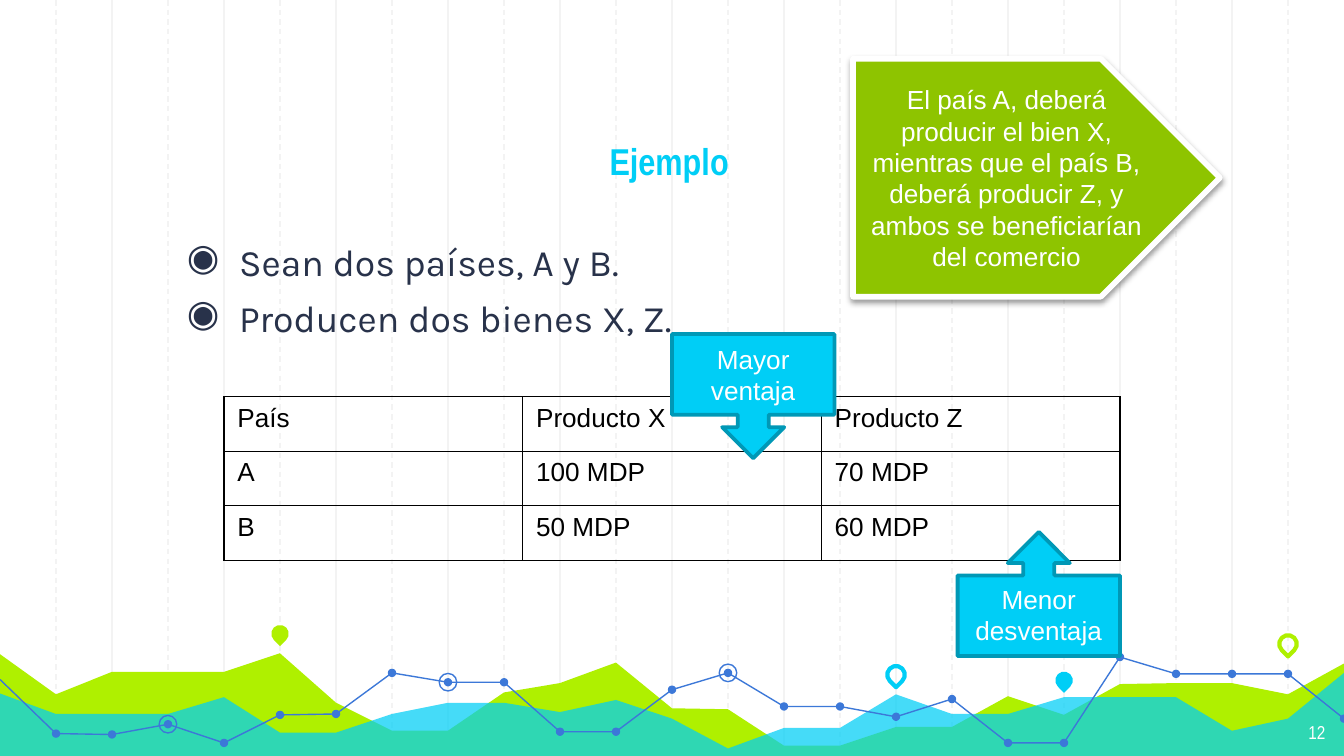
from lxml.etree import SubElement
from pptx import Presentation
from pptx.dml.color import RGBColor
from pptx.enum.dml import MSO_LINE
from pptx.enum.shapes import MSO_CONNECTOR, MSO_SHAPE as Preset
from pptx.enum.text import MSO_ANCHOR as Anchor, PP_ALIGN as Align
from pptx.oxml.ns import qn
from pptx.util import Pt

COLORS = {
    "white": "FFFFFF", "black": "000000", "grid": "F3F3F3",
    "lime": "AFF000", "cyan": "00CEF6", "teal": "0098B6",
    "trend": "3C78D8", "navy": "28324A", "green": "8EC400",
}
WIDTH, HEIGHT = 720, 405
STEP = 30  # one chart column
BASE = 406  # bottom of the areas

# One height for each column, from the left edge to the right edge
LIME_AREA = [350.5, 372, 360, 360, 360, 350, 376.5, 391.5, 391.5, 371, 366, 355, 379.5,
             380, 399.5, 399.5, 389.5, 389.5, 373, 383, 366.5, 366, 366, 372, 355.5]
CYAN_AREA = [371.5, 382.5, 382.5, 382.5, 373.5, 392.5, 392.5, 382.5, 376.5, 376.5, 381.5, 375, 385,
             401, 390, 390, 372, 382.5, 382.5, 373.5, 373.5, 373.5, 391.5, 385, 360.5]
TREND = [364, 393, 393.5, 388, 398, 383, 382.5, 360.5, 365.5, 365.5, 392, 392, 369.5,
         360.5, 378.5, 378.5, 384, 374.5, 398, 398, 352, 361, 361, 361, 385]
RINGED_COLUMNS = (3, 8, 13)
# column, centre height, colour, filled
PINS = [(5, 339.5, "lime", True), (16, 361.5, "cyan", False),
        (19, 364.5, "cyan", True), (23, 345, "lime", False)]

OUTPUTS = [("País", "Producto X", "Producto Z"),
           ("A", "100 MDP", "70 MDP"),
           ("B", "50 MDP", "60 MDP")]


def rgb(name):
    return RGBColor.from_string(COLORS[name])


def paint(shape, fill=None, line=None, weight=0.75):
    shape.shadow.inherit = False
    if fill:
        shape.fill.solid()
        shape.fill.fore_color.rgb = rgb(fill)
    else:
        shape.fill.background()
    if line:
        shape.line.color.rgb = rgb(line)
        shape.line.width = Pt(weight)
    else:
        shape.line.fill.background()


def write(frame, lines, size, color, font="Arial", align=Align.CENTER, bold=False):
    frame.word_wrap = True
    frame.text = "\n".join(lines)
    for paragraph in frame.paragraphs:
        paragraph.alignment = align
        for run in paragraph.runs:
            run.font.size = Pt(size)
            run.font.name = font
            run.font.bold = bold
            run.font.color.rgb = rgb(color)


def add_text(slide, box, lines, size, color, inset=7.2, anchor=Anchor.TOP, **style):
    frame = slide.shapes.add_textbox(*map(Pt, box)).text_frame
    frame.margin_top = frame.margin_bottom = Pt(inset)
    frame.vertical_anchor = anchor
    write(frame, lines, size, color, **style)
    return frame


def add_preset(slide, preset, box, **look):
    shape = slide.shapes.add_shape(preset, *map(Pt, box))
    paint(shape, **look)
    return shape


def add_centred(slide, preset, x, y, size, **look):
    """Add a round mark by its centre and diameter."""
    return add_preset(slide, preset, (x - size / 2, y - size / 2, size, size), **look)


def add_outline(slide, points, close, **look):
    start, *rest = [(Pt(x), Pt(y)) for x, y in points]
    builder = slide.shapes.build_freeform(*start)
    builder.add_line_segments(rest, close=close)
    outline = builder.convert_to_shape()
    paint(outline, **look)
    return outline


def column_points(heights):
    return [(column * STEP, y) for column, y in enumerate(heights)]


def add_area(slide, heights, color):
    points = column_points(heights) + [(WIDTH, BASE), (0, BASE)]
    return add_outline(slide, points, True, fill=color)


def set_alpha(shape, percent):
    color = shape.fill._xPr.find(".//" + qn("a:srgbClr"))
    SubElement(color, qn("a:alpha"), val=str(percent * 1000))


def add_drop_shadow(shape):
    effects = shape._element.spPr.find(qn("a:effectLst"))
    shadow = SubElement(effects, qn("a:outerShdw"), blurRad=str(Pt(3.1)), dist=str(Pt(1.6)),
                        dir="5400000", algn="ctr", rotWithShape="0")
    color = SubElement(shadow, qn("a:srgbClr"), val=COLORS["black"])
    SubElement(color, qn("a:alpha"), val="38000")


def add_grid(slide):
    """Solid rules on even columns, dashed ones on odd columns."""
    for column in range(1, WIDTH // STEP):
        x = Pt(column * STEP)
        rule = slide.shapes.add_connector(MSO_CONNECTOR.STRAIGHT, x, 0, x, Pt(BASE))
        rule.line.color.rgb = rgb("grid")
        rule.line.width = Pt(0.75)
        if column % 2:
            rule.line.dash_style = MSO_LINE.DASH
        SubElement(rule._element.spPr, qn("a:effectLst"))


def add_landscape(slide):
    add_area(slide, LIME_AREA, "lime")
    set_alpha(add_area(slide, CYAN_AREA, "cyan"), 73)
    for column, y, color, filled in PINS:
        look = {"fill": color} if filled else {"line": color, "weight": 2.25}
        pin = add_centred(slide, Preset.TEAR, column * STEP, y, 9.4, **look)
        pin.rotation = 135
    trend_points = column_points(TREND)
    add_outline(slide, trend_points, False, line="trend")
    for x, y in trend_points[1:]:
        add_centred(slide, Preset.OVAL, x, y, 4.5, fill="trend")
    for column in RINGED_COLUMNS:
        add_centred(slide, Preset.OVAL, *trend_points[column], 9.4, line="trend")


def add_bullets(frame):
    for paragraph in frame.paragraphs:
        paragraph.space_before = Pt(6)
        props = paragraph._p.get_or_add_pPr()
        props.set("marL", str(Pt(36)))
        props.set("indent", str(Pt(-28)))
        bullet_color = SubElement(props, qn("a:buClr"))
        SubElement(bullet_color, qn("a:srgbClr"), val=COLORS["navy"])
        SubElement(props, qn("a:buChar"), char="◉")


def add_cell_borders(cell):
    props = cell._tc.get_or_add_tcPr()
    for index, side in enumerate(("lnL", "lnR", "lnT", "lnB")):
        border = props.makeelement(qn("a:" + side), {"w": str(Pt(0.75))})
        fill = SubElement(border, qn("a:solidFill"))
        SubElement(fill, qn("a:srgbClr"), val=COLORS["black"])
        props.insert(index, border)


def add_output_table(slide):
    box = map(Pt, (120, 212.5, 480, 87.75))
    table = slide.shapes.add_table(len(OUTPUTS), len(OUTPUTS[0]), *box).table
    table.first_row = table.horz_banding = False
    for r, row in enumerate(OUTPUTS):
        for c, value in enumerate(row):
            cell = table.cell(r, c)
            cell.fill.background()
            write(cell.text_frame, [value], 14, "black", align=Align.LEFT)
            add_cell_borders(cell)


def add_callouts(slide):
    look = {"fill": "cyan", "line": "teal", "weight": 2}
    advantage = add_preset(slide, Preset.DOWN_ARROW_CALLOUT, (360, 179, 87, 66.5), **look)
    write(advantage.text_frame, ["Mayor ventaja"], 14, "white")
    disadvantage = add_preset(slide, Preset.DOWN_ARROW_CALLOUT, (513, 285, 87, 66.5), **look)
    disadvantage.rotation = 180
    add_text(slide, (490, 309, 133, 41), ["Menor", "desventaja"], 14, "white", inset=3.6)

    conclusion = add_preset(slide, Preset.PENTAGON, (457, 31.5, 196.5, 127.5),
                            fill="green", line="white", weight=3)
    add_drop_shadow(conclusion)
    write(conclusion.text_frame,
          ["El país A, deberá producir el bien X, mientras que el país B, "
           "deberá producir Z, y ambos se beneficiarían del comercio"], 14, "white")


def main():
    deck = Presentation()
    deck.slide_width, deck.slide_height = Pt(WIDTH), Pt(HEIGHT)
    slide = deck.slides.add_slide(deck.slide_layouts[6])
    add_grid(slide)
    add_landscape(slide)
    add_text(slide, (83, 49.5, 551, 56), ["Ejemplo"], 20, "cyan",
             anchor=Anchor.BOTTOM, font="Arial Narrow", bold=True)
    premises = add_text(slide, (85, 121, 551, 151),
                        ["Sean dos países, A y B.", "Producen dos bienes X, Z."],
                        20, "navy", font="Karla", align=Align.LEFT)
    add_bullets(premises)
    add_text(slide, (674, 380, 43, 25), ["12"], 10, "white",
             font="Arial Narrow", align=Align.RIGHT)
    add_output_table(slide)
    add_callouts(slide)
    deck.save("out.pptx")


if __name__ == "__main__":
    main()
